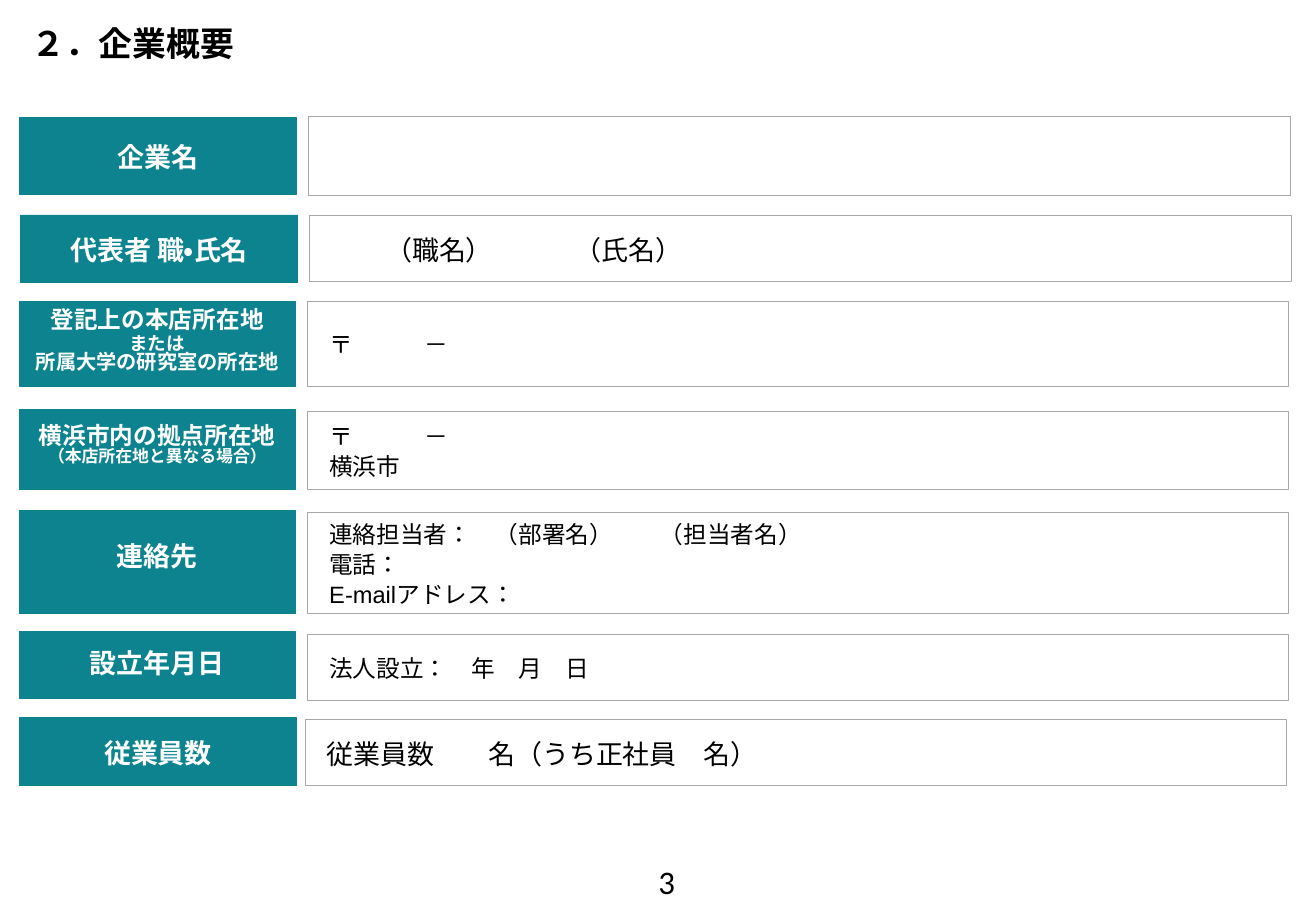
import pptx
import pptx.dml.color
import pptx.enum.lang
import pptx.enum.shapes
import pptx.enum.text
import pptx.oxml.ns
import pptx.util
from lxml import etree
from pptx.util import Inches

TEAL = pptx.dml.color.RGBColor(0x0D, 0x83, 0x90)
GREY = pptx.dml.color.RGBColor(0xA7, 0xA8, 0xAA)
WHITE = pptx.dml.color.RGBColor(0xFF, 0xFF, 0xFF)
BLACK = pptx.dml.color.RGBColor(0x00, 0x00, 0x00)

LEFT = pptx.enum.text.PP_ALIGN.LEFT
CENTER = pptx.enum.text.PP_ALIGN.CENTER
PADDING = 0.08
VALUE_INDENT = 0.18


def write_lines(frame, lines, color, font, bold, align=LEFT, spacing=1.0, tabs=()):
    """Fill a text frame with (text, size) lines, one paragraph each."""
    for index, (text, size) in enumerate(lines):
        paragraph = frame.paragraphs[0] if index == 0 else frame.add_paragraph()
        paragraph.alignment = align
        paragraph.line_spacing = spacing
        if tabs:
            properties = paragraph._p.get_or_add_pPr()
            tab_list = etree.SubElement(properties, pptx.oxml.ns.qn("a:tabLst"))
            for position in tabs:
                etree.SubElement(tab_list, pptx.oxml.ns.qn("a:tab"),
                                 pos=str(Inches(position)), algn="l")
        run = paragraph.add_run()
        run.text = text
        run.font.color.rgb = color
        style = {"name": font, "size": pptx.util.Pt(size), "bold": bold,
                 "language_id": pptx.enum.lang.MSO_LANGUAGE_ID.JAPANESE}
        for attribute, value in style.items():
            setattr(run.font, attribute, value)


def add_box(at, fill, outline, left_padding):
    """Add an outlined rectangle and return its text frame."""
    box = slide.shapes.add_shape(pptx.enum.shapes.MSO_SHAPE.RECTANGLE,
                                 *[Inches(length) for length in at])
    box.shadow.inherit = False
    box.fill.solid()
    box.fill.fore_color.rgb = fill
    box.line.color.rgb = outline
    box.line.width = pptx.util.Pt(0.5)
    layout = {"margin_left": Inches(left_padding), "margin_right": Inches(PADDING),
              "margin_top": Inches(PADDING), "margin_bottom": Inches(PADDING),
              "word_wrap": True,
              "vertical_anchor": pptx.enum.text.MSO_ANCHOR.MIDDLE}
    for attribute, value in layout.items():
        setattr(box.text_frame, attribute, value)
    return box.text_frame


presentation = pptx.Presentation()
presentation.slide_width = Inches(10.83)
presentation.slide_height = Inches(7.5)
slide = presentation.slides.add_slide(presentation.slide_layouts[6])

headings = [
    ((0.16, 0.14, 9.92, 0.67), "２．企業概要", 20, True),
    ((5.32, 7.04, 0.4, 0.35), "3", 19.5, False),
]
for at, text, size, bold in headings:
    heading = slide.shapes.add_textbox(*[Inches(length) for length in at])
    heading.text_frame.word_wrap = True
    write_lines(heading.text_frame, [(text, size)], BLACK, "Calibri", bold)

# Each row: label box, label lines, label line spacing, value box, value lines, tab stops
rows = [
    ((0.16, 0.97, 2.28, 0.63), [("企業名", 16)], 1.06,
     (2.54, 0.96, 8.08, 0.65), [], ()),
    ((0.17, 1.77, 2.28, 0.56), [("代表者 職・氏名", 16)], 1.06,
     (2.55, 1.77, 8.08, 0.55), [("\t（職名）\t（氏名）", 16)], (0.44, 2.0)),
    ((0.16, 2.48, 2.27, 0.7),
     [("登記上の本店所在地", 14), ("または", 11), ("所属大学の研究室の所在地", 12)],
     pptx.util.Pt(12),
     (2.53, 2.48, 8.07, 0.7), [("〒\t－", 14)], (0.78,)),
    ((0.16, 3.37, 2.27, 0.66),
     [("横浜市内の拠点所在地", 14), ("（本店所在地と異なる場合）", 10)],
     pptx.util.Pt(10),
     (2.53, 3.39, 8.07, 0.64), [("〒\t－", 14), ("横浜市", 14)], (0.78,)),
    ((0.16, 4.2, 2.27, 0.85), [("連絡先", 16)], pptx.util.Pt(12),
     (2.53, 4.22, 8.07, 0.83),
     [("連絡担当者：　（部署名）\t（担当者名）", 14), ("電話：", 14),
      ("E-mailアドレス：", 14)], (2.72,)),
    ((0.16, 5.2, 2.27, 0.55), [("設立年月日", 16)], pptx.util.Pt(16),
     (2.53, 5.22, 8.07, 0.55), [("法人設立：　年　月　日", 14)], ()),
    ((0.16, 5.91, 2.28, 0.56), [("従業員数", 16)], 1.06,
     (2.51, 5.92, 8.08, 0.55), [("従業員数\t名（うち正社員　名）", 16)], (1.33,)),
]
for label_at, label_lines, label_spacing, value_at, value_lines, tabs in rows:
    label = add_box(label_at, TEAL, TEAL, PADDING)
    write_lines(label, label_lines, WHITE, "Arial", True, CENTER, label_spacing)
    entry = add_box(value_at, WHITE, GREY, VALUE_INDENT)
    write_lines(entry, value_lines, BLACK, "Arial", False, LEFT, 1.06, tabs)

presentation.save("out.pptx")
